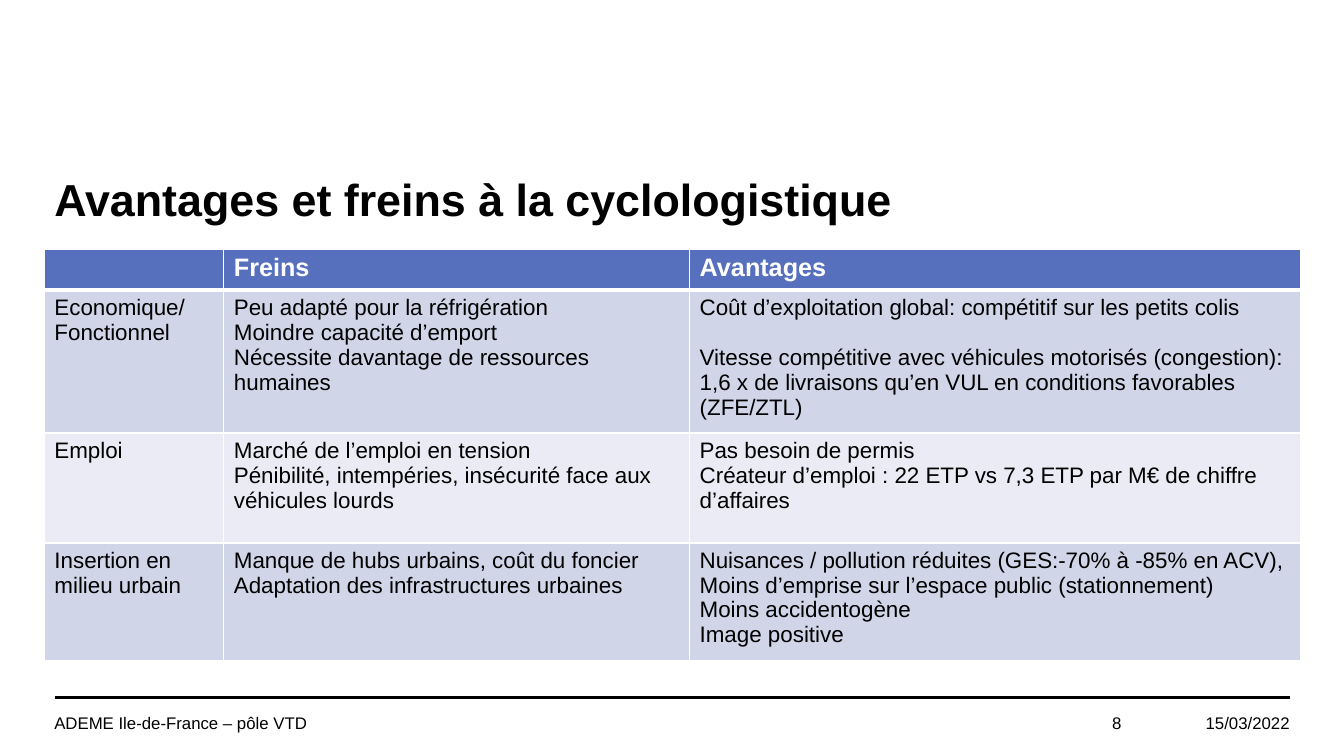
from dataclasses import dataclass

from lxml.etree import SubElement
from pptx import Presentation
from pptx.dml.color import RGBColor
from pptx.enum.shapes import MSO_CONNECTOR
from pptx.enum.text import MSO_ANCHOR, PP_ALIGN
from pptx.oxml import parse_xml
from pptx.oxml.ns import nsdecls, qn
from pptx.slide import Slide
from pptx.table import _Cell
from pptx.text.text import TextFrame
from pptx.util import Emu, Pt

EMU_PER_PX = 9144
FONT = "Arial"
COLORS = {
    "black": "000000",
    "white": "FFFFFF",
    "header": "5770BE",
    "odd": "D1D5E8",
    "even": "EAEBF4",
}


@dataclass(frozen=True)
class Label:
    text: str
    left: int
    top: int
    width: int
    height: int
    size: int = 12
    bold: bool = False
    align: PP_ALIGN = PP_ALIGN.LEFT
    anchor: MSO_ANCHOR = MSO_ANCHOR.MIDDLE
    line_spacing: float = 1.0


@dataclass(frozen=True)
class Row:
    height: int
    fill: str
    texts: tuple[str, str, str]
    color: str = "black"
    size: int = 16
    bold: bool = False
    top_border: int = 1
    bottom_border: int = 1


LABELS = [
    Label("Avantages et freins à la cyclologistique", 44, 84, 1246, 145, size=32,
          bold=True, anchor=MSO_ANCHOR.BOTTOM, line_spacing=0.9),
    Label("15/03/2022", 1164, 697, 125, 40, align=PP_ALIGN.RIGHT),
    Label("ADEME Ile-de-France – pôle VTD", 44, 697, 447, 40),
    Label("8", 1044, 697, 78, 40, align=PP_ALIGN.RIGHT),
]

COLUMN_WIDTHS = [178, 462, 606]
ROWS = [
    Row(41, "header", ("", "Freins", "Avantages"), color="white", size=18, bold=True,
        bottom_border=3),
    Row(133, "odd", (
        "Economique/\nFonctionnel",
        "Peu adapté pour la réfrigération\nMoindre capacité d’emport\n"
        "Nécessite davantage de ressources humaines",
        "Coût d’exploitation global: compétitif sur les petits colis\n"
        "Vitesse compétitive avec véhicules motorisés (congestion): 1,6 x de livraisons "
        "qu’en VUL en conditions favorables (ZFE/ZTL)",
    ), top_border=3),
    Row(109, "even", (
        "Emploi",
        "Marché de l’emploi en tension\n"
        "Pénibilité, intempéries, insécurité face aux véhicules lourds",
        "Pas besoin de permis\n"
        "Créateur d’emploi : 22 ETP vs 7,3 ETP par M€ de chiffre d’affaires",
    )),
    Row(109, "odd", (
        "Insertion en milieu urbain",
        "Manque de hubs urbains, coût du foncier Adaptation des infrastructures urbaines",
        "Nuisances / pollution réduites (GES:-70% à -85% en ACV),\n"
        "Moins d’emprise sur l’espace public (stationnement)\n"
        "Moins accidentogène\nImage positive",
    )),
]


def px(length: int) -> Emu:
    return Emu(length * EMU_PER_PX)


def rgb(name: str) -> RGBColor:
    return RGBColor.from_string(COLORS[name])


def write_text(frame: TextFrame, text: str, *, size: int, color: str = "black",
               bold: bool = False, align: PP_ALIGN = PP_ALIGN.LEFT,
               line_spacing: float = 1.0) -> None:
    frame.word_wrap = True
    for index, line in enumerate(text.split("\n")):
        para = frame.add_paragraph() if index else frame.paragraphs[0]
        para.alignment = align
        para.line_spacing = line_spacing
        para.font.size = Pt(size)
        if line:
            span = para.add_run()
            span.text = line
            span.font.name = FONT
            span.font.size = Pt(size)
            span.font.bold = bold
            span.font.color.rgb = rgb(color)


def add_label(page: Slide, label: Label) -> None:
    box = page.shapes.add_textbox(px(label.left), px(label.top),
                                  px(label.width), px(label.height))
    box.text_frame.vertical_anchor = label.anchor
    write_text(box.text_frame, label.text, size=label.size, bold=label.bold,
               align=label.align, line_spacing=label.line_spacing)


def add_footer_rule(page: Slide) -> None:
    rule = page.shapes.add_connector(MSO_CONNECTOR.STRAIGHT,
                                     px(55), px(692), px(1279), px(692))
    rule.line.color.rgb = rgb("black")
    rule.line.width = Pt(1.5)
    SubElement(rule._element.spPr, qn("a:effectLst"))


def set_borders(cell: _Cell, row: Row) -> None:
    properties = cell._tc.get_or_add_tcPr()
    widths = {"lnL": 1, "lnR": 1, "lnT": row.top_border, "lnB": row.bottom_border}
    for index, (side, width) in enumerate(widths.items()):
        border = parse_xml(
            f'<a:{side} {nsdecls("a")} w="{Pt(width)}"><a:solidFill>'
            f'<a:srgbClr val="{COLORS["white"]}"/></a:solidFill></a:{side}>'
        )
        properties.insert(index, border)


def add_comparison_table(page: Slide) -> None:
    table = page.shapes.add_table(
        len(ROWS), len(COLUMN_WIDTHS), px(44), px(247),
        px(sum(COLUMN_WIDTHS)), px(sum(row.height for row in ROWS))).table
    for column, width in zip(table.columns, COLUMN_WIDTHS):
        column.width = px(width)
    for row_index, row in enumerate(ROWS):
        table.rows[row_index].height = px(row.height)
        for column_index, text in enumerate(row.texts):
            cell = table.cell(row_index, column_index)
            cell.fill.solid()
            cell.fill.fore_color.rgb = rgb(row.fill)
            set_borders(cell, row)
            write_text(cell.text_frame, text, size=row.size, color=row.color,
                       bold=row.bold)
    speed_para = table.cell(1, 2).text_frame.paragraphs[1]
    speed_para.space_before = Pt(18)


def main() -> None:
    deck = Presentation()
    deck.slide_width, deck.slide_height = px(1333), px(750)
    page = deck.slides.add_slide(deck.slide_layouts[6])
    add_footer_rule(page)
    for label in LABELS:
        add_label(page, label)
    add_comparison_table(page)
    deck.save("out.pptx")


if __name__ == "__main__":
    main()
